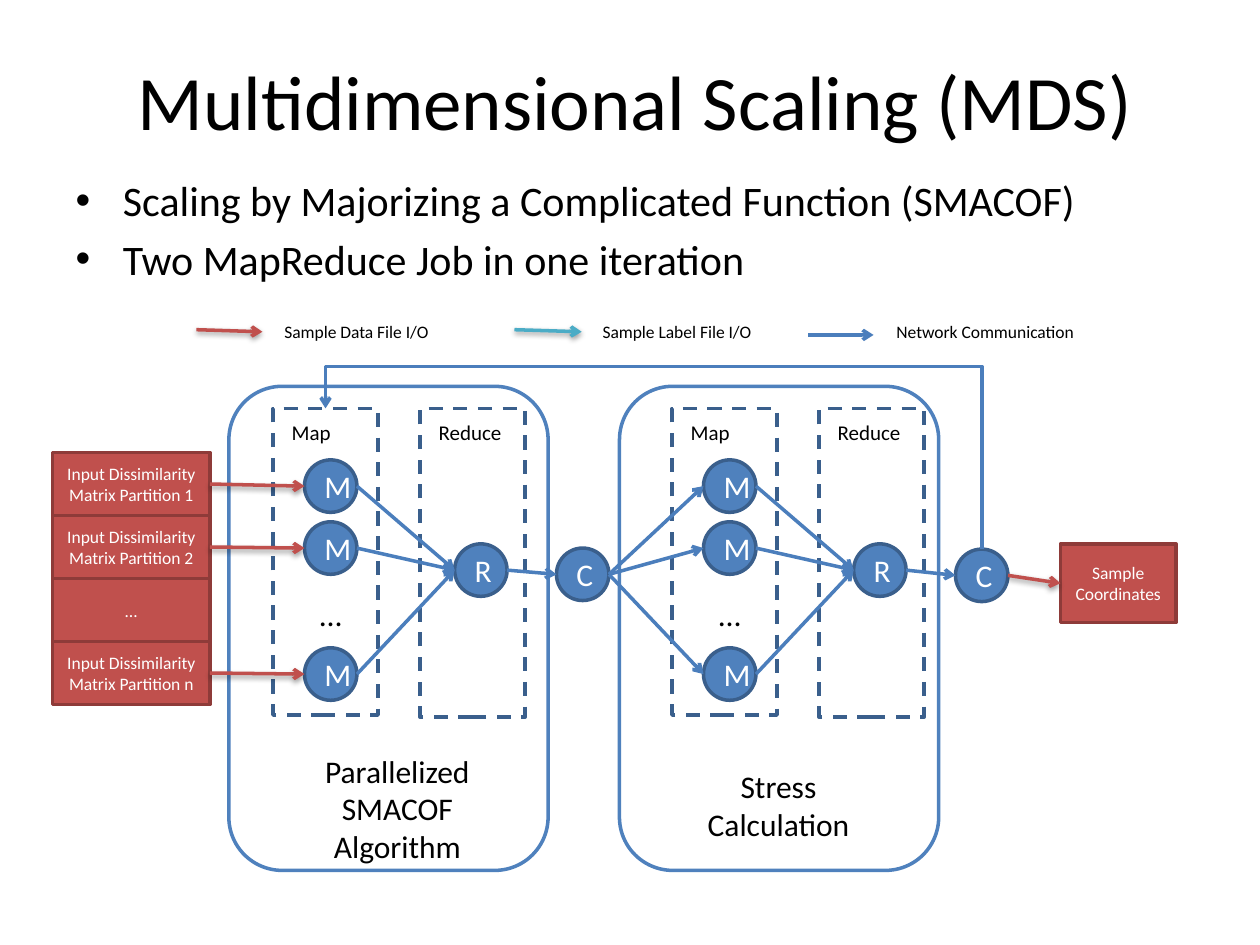
import pptx
import pptx.util
import pptx.dml.color
import pptx.enum.dml
import pptx.enum.shapes
import pptx.enum.text
import pptx.oxml
import pptx.oxml.ns

COLS, ROWS = 120, 90
HUES = {
    "blue": "4F81BD", "edge": "3A5F8C", "link": "4B7EBC", "aqua": "4BACC6",
    "red": "C0504D", "rust": "8E3B39", "white": "FFFFFF", "black": "000000",
}
KIND = pptx.enum.shapes.MSO_SHAPE
WIRE = pptx.enum.shapes.MSO_CONNECTOR
ALIGN = pptx.enum.text.PP_ALIGN
MID = pptx.enum.text.MSO_ANCHOR.MIDDLE
DOT = 5  # width of a node in grid columns

deck = pptx.Presentation()
deck.slide_width = pptx.util.Inches(10)
deck.slide_height = pptx.util.Inches(7.5)
slide = deck.slides.add_slide(deck.slide_layouts[1])


def span(*cells):
    """Turn alternating columns and rows into slide lengths."""
    units = (deck.slide_width / COLS, deck.slide_height / ROWS)
    return [round(n * units[i % 2]) for i, n in enumerate(cells)]


def hue(name):
    return pptx.dml.color.RGBColor.from_string(HUES[name])


def write(shape, text, size=18, tone="black", align=None, anchor=None):
    frame = shape.text_frame
    frame.text = text
    frame.word_wrap = True
    if anchor is not None:
        frame.vertical_anchor = anchor
    for para in frame.paragraphs:
        para.alignment = align
        para.font.size = pptx.util.Pt(size)
        para.font.name = "Calibri"
        para.font.color.rgb = hue(tone)


def label(box, text, **form):
    write(slide.shapes.add_textbox(*span(*box)), text, **form)


def block(kind, box, fill, edge, text="", size=18):
    shape = slide.shapes.add_shape(kind, *span(*box))
    shape.shadow.inherit = False
    if fill:
        shape.fill.solid()
        shape.fill.fore_color.rgb = hue(fill)
    else:
        shape.fill.background()
    shape.line.color.rgb = hue(edge)
    shape.line.width = pptx.util.Pt(2)
    if text:
        write(shape, text, size=size, tone="white", align=ALIGN.CENTER, anchor=MID)
    return shape


def node(col, row, text):
    return block(KIND.OVAL, (col, row, DOT, DOT), "blue", "edge", text)


def card(box, text):
    return block(KIND.RECTANGLE, box, "red", "rust", text, size=10)


def arrow(start, end, tone="link", kind=WIRE.STRAIGHT, shade=False):
    """Draw an arrow between two points given in slide lengths."""
    line = slide.shapes.add_connector(kind, *start, *end)
    line.line.color.rgb = hue(tone)
    line.line.width = pptx.util.Pt(2)
    make = pptx.oxml.parse_xml
    names = pptx.oxml.ns.nsdecls("a")
    props = line._element.spPr
    props.find(pptx.oxml.ns.qn("a:ln")).append(make(f'<a:tailEnd {names} type="arrow"/>'))
    glow = ""
    if shade:
        glow = ('<a:outerShdw blurRad="40000" dist="20000" dir="5400000" rotWithShape="0">'
                f'<a:srgbClr val="{HUES["black"]}"><a:alpha val="38000"/></a:srgbClr>'
                '</a:outerShdw>')
    props.append(make(f"<a:effectLst {names}>{glow}</a:effectLst>"))
    return line


def left(shape):
    return shape.left, shape.top + shape.height // 2


def right(shape):
    return shape.left + shape.width, shape.top + shape.height // 2


def heads():
    title, body = slide.placeholders
    for part, box in ((title, (6.5, 2, 108, 15)), (body, (6, 16, 108, 14))):
        part.left, part.top, part.width, part.height = span(*box)
    write(title, "Multidimensional Scaling (MDS)", size=44, align=ALIGN.CENTER, anchor=MID)
    write(body, "Scaling by Majorizing a Complicated Function (SMACOF)\n"
                "Two MapReduce Job in one iteration", size=24)


def legend(row):
    items = (
        (18.7, 6.3, 0.2, "red", True, "Sample Data File I/O"),
        (49, 6.4, 0.2, "aqua", True, "Sample Label File I/O"),
        (77, 6.2, 0, "link", False, "Network Communication"),
    )
    for col, wide, drop, tone, shade, text in items:
        base = row + (1.4 if shade else 1.9)
        arrow(span(col, base), span(col + wide, base + drop), tone, shade=shade)
        label((col + 7.2, row, 22, 3.2), text, size=10)


def frame(box, text, inset, drop):
    """Draw a job's round outline with its caption near the foot."""
    col, row, wide, high = box
    block(KIND.ROUNDED_RECTANGLE, box, "white", "blue")
    label((col + inset, row + drop, 25.7, high - drop), text, align=ALIGN.CENTER)


def job(col, row):
    """Draw the map and reduce panels; return the map nodes and the reduce node."""
    for step, text, high in ((0, "Map", 29.2), (14, "Reduce", 29.4)):
        panel = block(KIND.RECTANGLE, (col + step, row, 10, high), None, "edge")
        panel.line.dash_style = pptx.enum.dml.MSO_LINE.DASH
        label((col + step + 0.6, row + 0.5, 9, 3.6), text, size=12)
    maps = [node(col + 3, row + drop, "M") for drop in (4.9, 10.8, 22.8)]
    label((col + 2, row + 17.2, 7, 4.8), "…", align=ALIGN.CENTER)
    merge = node(col + 17.3, row + 12.9, "R")
    for item in maps:
        arrow(right(item), left(merge))
    return maps, merge


def inputs(box):
    col, row, wide, high = box
    name = "Input Dissimilarity Matrix Partition "
    texts = (name + "1", name + "2", "…", name + "n")
    step = high / len(texts)
    return [card((col, row + i * step, wide, step), text) for i, text in enumerate(texts)]


def loop(start, end, rise):
    """Run an elbow arrow up from start, across, and down to end."""
    (x1, y1), (x2, y2) = start, end
    wide, high = y1 - y2, x1 - x2
    x = (x1 + x2 - wide) // 2
    y = (y1 + y2 - high) // 2
    line = arrow((x, y + high), (x + wide, y), kind=WIRE.ELBOW)
    props = line._element.spPr
    props.xfrm.set("rot", "16200000")
    guides = props.find(pptx.oxml.ns.qn("a:prstGeom")).get_or_add_avLst()
    guide = guides.makeelement(pptx.oxml.ns.qn("a:gd"), {
        "name": "adj1", "fmla": f"val {round(100000 * (1 + rise / wide))}"})
    guides.append(guide)


def flow():
    frame((59, 36.8, 30.4, 46.1), "Stress\nCalculation", 2.3, 35.7)
    frame((21.8, 36.8, 30.4, 46.1), "Parallelized SMACOF Algorithm", 3.2, 34.2)
    cards = inputs((5, 43.1, 15, 24))
    maps, merge = job(26, 38.9)
    for source, item in zip((cards[0], cards[1], cards[3]), maps):
        line = arrow(right(source), left(item), "red", shade=True)
        line.begin_connect(source, 3)
    join = node(53, 52.2, "C")
    arrow(right(merge), left(join))

    maps, merge = job(64, 38.9)
    for item in maps:
        arrow(right(join), left(item))
    last = node(91, 52.3, "C")
    arrow(right(merge), left(last))
    loop((last.left + last.width // 2, last.top), span(31, 38.9), span(0, 4)[1])
    result = card((101, 51.8, 11, 7.5), "Sample Coordinates")
    line = arrow(right(last), left(result), "red", shade=True)
    line.end_connect(result, 1)


heads()
flow()
legend(30)
deck.save("out.pptx")
